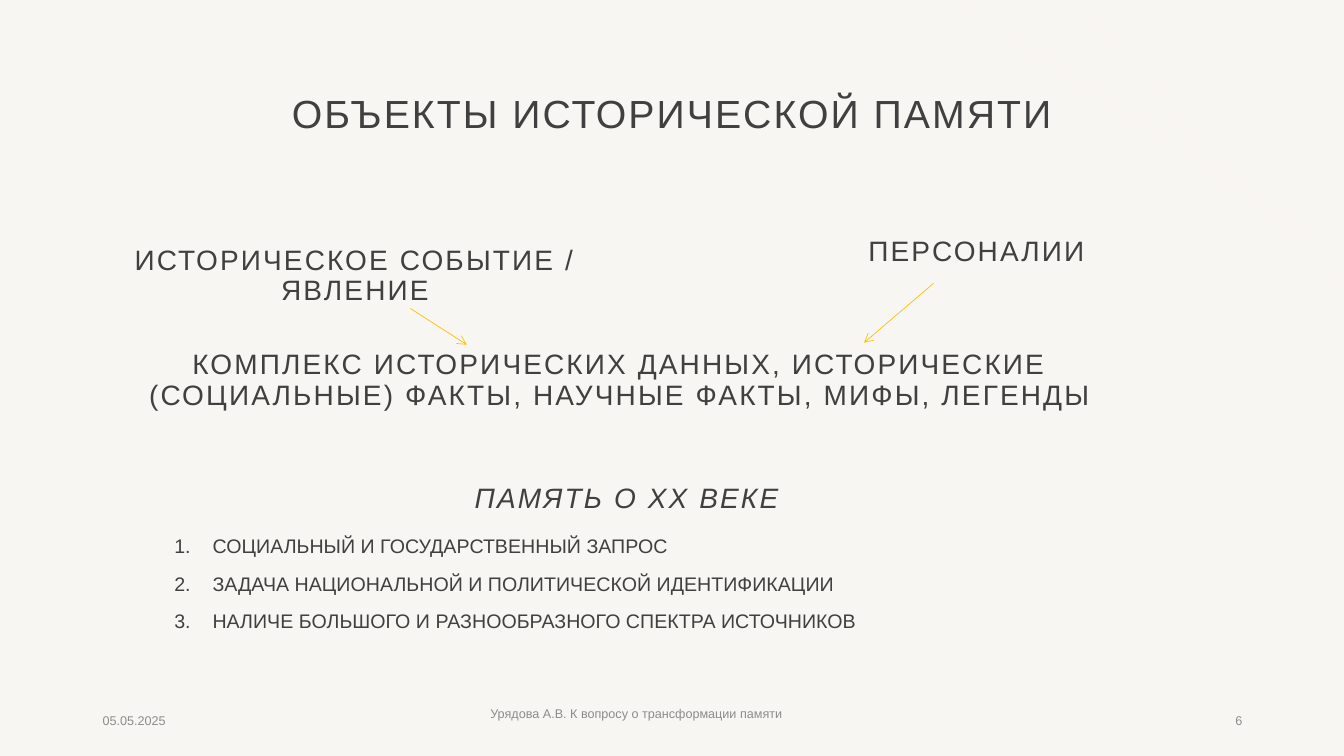
"""Build the slide on the objects of historical memory."""
from dataclasses import dataclass, field

from lxml.etree import SubElement
from pptx import Presentation
from pptx.dml.color import RGBColor
from pptx.enum.shapes import MSO_CONNECTOR
from pptx.enum.text import MSO_ANCHOR, PP_ALIGN
from pptx.oxml.ns import qn
from pptx.slide import Slide
from pptx.util import Inches, Pt

BACKGROUND = RGBColor(0xF7, 0xF6, 0xF3)
TEXT = RGBColor(0x40, 0x40, 0x40)
FOOTER = RGBColor(0x8C, 0x8C, 0x8C)
ARROW = RGBColor(0xFF, 0xC0, 0x00)
DECORATION = RGBColor(0xFB, 0xF4, 0xEF)

HEADING = {"size": Pt(20), "color": TEXT, "spacing": 150}
TITLE = HEADING | {"size": Pt(28)}
ITALIC = HEADING | {"italic": True}
LIST = {"size": Pt(14), "color": TEXT}
SMALL = {"size": Pt(9), "color": FOOTER}


@dataclass(frozen=True)
class TextBlock:
    """Text with its place and format."""

    place: tuple[float, float, float, float]
    lines: tuple[str, ...]
    style: dict
    layout: dict = field(default_factory=dict)
    anchor: MSO_ANCHOR = MSO_ANCHOR.TOP
    numbered: bool = False


@dataclass(frozen=True)
class Line:
    """Straight line between two points."""

    start: tuple[float, float]
    end: tuple[float, float]
    color: RGBColor
    arrow: bool = False


CENTERED = {"alignment": PP_ALIGN.CENTER, "line_spacing": 0.9}
MIDDLE = MSO_ANCHOR.MIDDLE

BLOCKS = (
    TextBlock((2.06, 0.67, 9.21, 0.96), ("ОБЪЕКТЫ ИСТОРИЧЕСКОЙ ПАМЯТИ",), TITLE, CENTERED, MIDDLE),
    TextBlock((1.01, 2.39, 5.02, 0.81), ("ИСТОРИЧЕСКОЕ СОБЫТИЕ / ЯВЛЕНИЕ",), HEADING, CENTERED),
    TextBlock((7.48, 2.33, 4.41, 0.4), ("ПЕРСОНАЛИИ",), HEADING, CENTERED | {"line_spacing": 0.8}),
    TextBlock(
        (1.28, 3.43, 9.73, 0.85),
        ("КОМПЛЕКС ИСТОРИЧЕСКИХ ДАННЫХ, ИСТОРИЧЕСКИЕ (СОЦИАЛЬНЫЕ) ФАКТЫ, НАУЧНЫЕ ФАКТЫ, МИФЫ, ЛЕГЕНДЫ",),
        HEADING,
        CENTERED,
    ),
    TextBlock((4.01, 4.76, 4.41, 0.48), ("ПАМЯТЬ О ХХ ВЕКЕ",), ITALIC, CENTERED),
    TextBlock(
        (1.63, 5.25, 8.31, 1.55),
        (
            "СОЦИАЛЬНЫЙ И ГОСУДАРСТВЕННЫЙ ЗАПРОС",
            "ЗАДАЧА НАЦИОНАЛЬНОЙ И ПОЛИТИЧЕСКОЙ ИДЕНТИФИКАЦИИ",
            "НАЛИЧЕ БОЛЬШОГО И РАЗНООБРАЗНОГО СПЕКТРА ИСТОЧНИКОВ",
        ),
        LIST,
        {"alignment": PP_ALIGN.JUSTIFY},
        numbered=True,
    ),
    TextBlock((0.92, 6.95, 3, 0.4), ("05.05.2025",), SMALL, anchor=MIDDLE),
    TextBlock(
        (4.06, 6.88, 4.5, 0.4),
        ("Урядова А.В. К вопросу о трансформации памяти",),
        SMALL,
        {"alignment": PP_ALIGN.CENTER},
        MIDDLE,
    ),
    TextBlock((9.42, 6.95, 3, 0.4), ("6",), SMALL, {"alignment": PP_ALIGN.RIGHT}, MIDDLE),
)

LINES = (
    Line((9.5, 0), (13.33, 2.57), DECORATION),
    Line((10.63, 0), (13.33, 2.95), DECORATION),
    Line((4.07, 3.06), (4.63, 3.42), ARROW, True),
    Line((9.26, 2.81), (8.57, 3.4), ARROW, True),
)


def add_block(page: Slide, block: TextBlock) -> None:
    """Add a text box with formatted paragraphs."""
    box = page.shapes.add_textbox(*map(Inches, block.place))
    frame = box.text_frame
    frame.word_wrap = True
    frame.vertical_anchor = block.anchor
    for index, line in enumerate(block.lines):
        para = frame.add_paragraph() if index else frame.paragraphs[0]
        for name, value in block.layout.items():
            setattr(para, name, value)
        if index:
            para.space_before = Pt(10)
        if block.numbered:
            properties = para._p.get_or_add_pPr()
            properties.set("marL", str(Inches(0.38)))
            properties.set("indent", str(Inches(-0.38)))
            SubElement(properties, qn("a:buFont"), typeface="Arial")
            SubElement(properties, qn("a:buAutoNum"), type="arabicPeriod")
        span = para.add_run()
        span.text = line
        span.font.name = "Arial"
        for name, value in block.style.items():
            if name == "color":
                span.font.color.rgb = value
            elif name == "spacing":
                span._r.get_or_add_rPr().set("spc", str(value))
            else:
                setattr(span.font, name, value)


def add_line(page: Slide, line: Line) -> None:
    """Add a thin line, with an arrowhead if asked."""
    connector = page.shapes.add_connector(
        MSO_CONNECTOR.STRAIGHT, *map(Inches, line.start + line.end)
    )
    connector.line.color.rgb = line.color
    connector.line.width = Pt(0.5)
    if line.arrow:
        SubElement(connector.line._get_or_add_ln(), qn("a:tailEnd"), type="arrow")
    SubElement(connector._element.spPr, qn("a:effectLst"))


def main() -> None:
    """Build and save the deck."""
    deck = Presentation()
    deck.slide_width = Inches(13.33)
    deck.slide_height = Inches(7.5)
    page = deck.slides.add_slide(deck.slide_layouts[6])
    page.background.fill.solid()
    page.background.fill.fore_color.rgb = BACKGROUND
    for line in LINES:
        add_line(page, line)
    for block in BLOCKS:
        add_block(page, block)
    deck.save("out.pptx")


if __name__ == "__main__":
    main()
